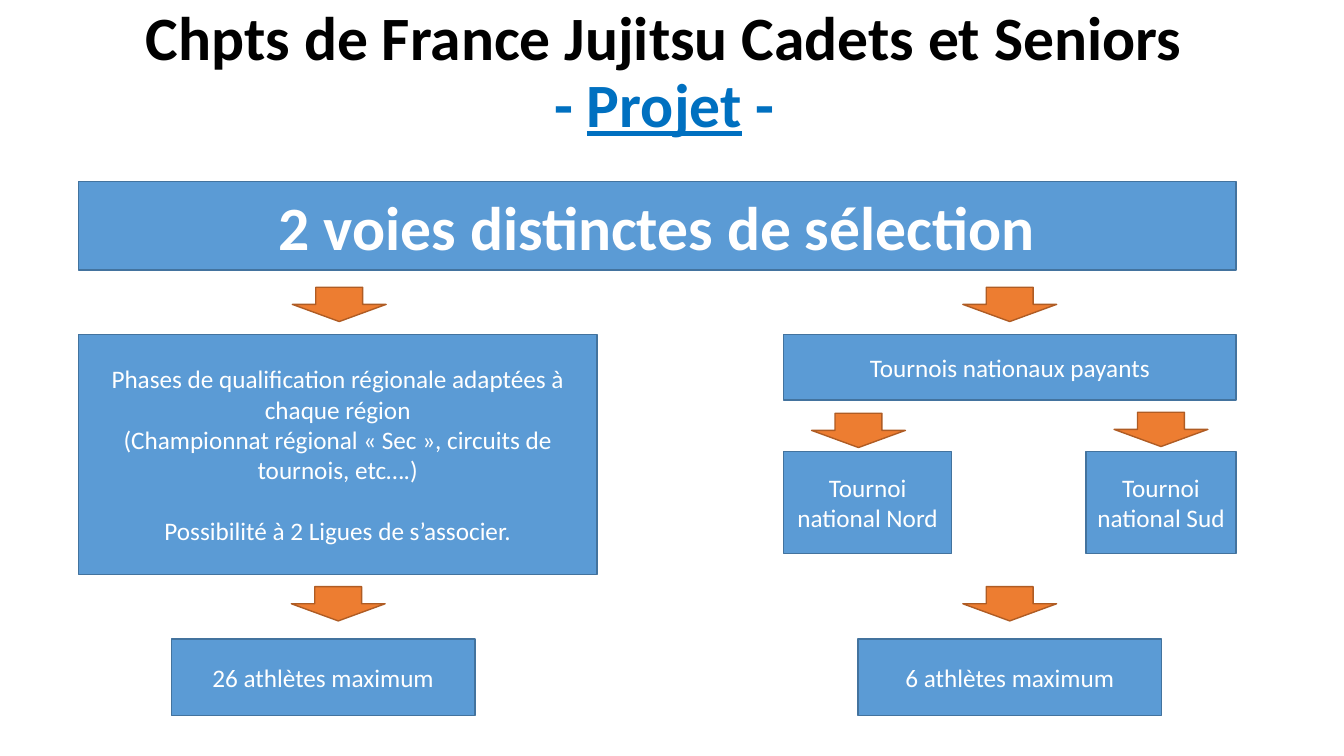
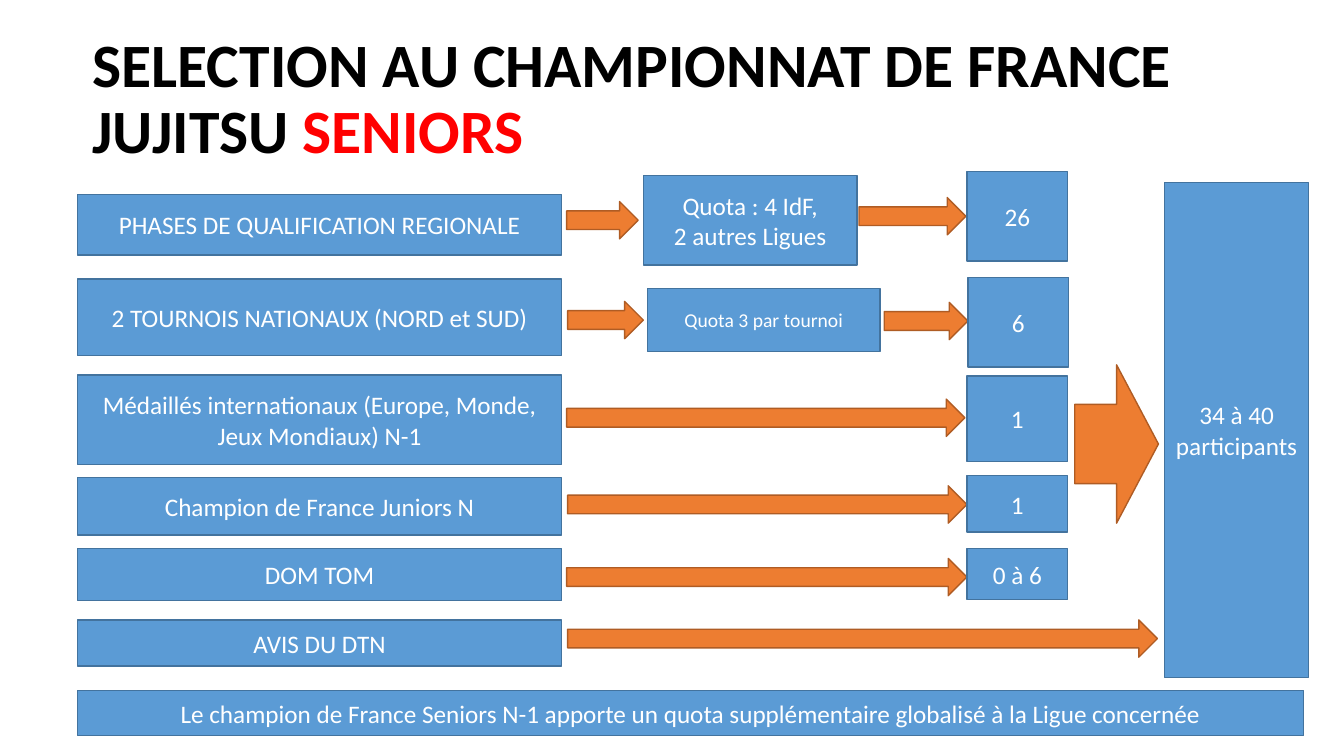
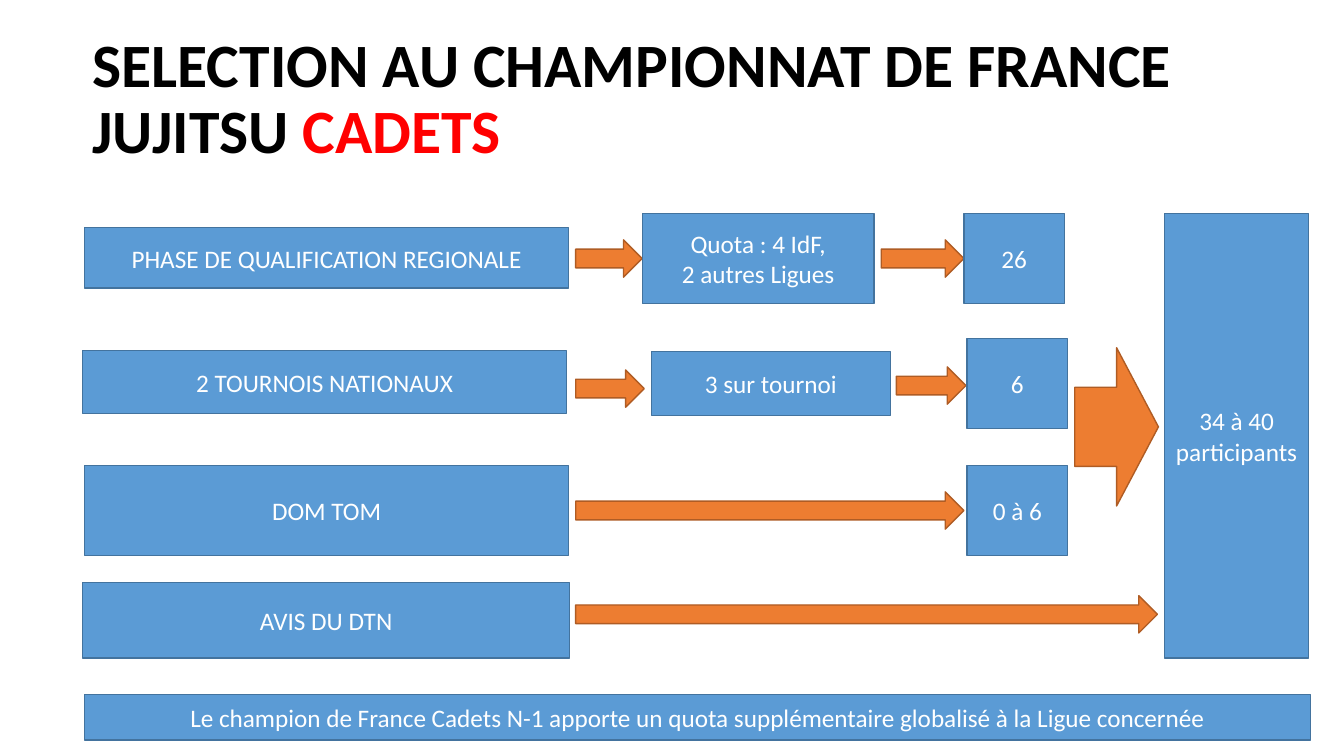
from pptx import Presentation
from pptx.dml.color import RGBColor
from pptx.enum.shapes import MSO_SHAPE
from pptx.enum.text import MSO_ANCHOR, PP_ALIGN
from pptx.util import Pt

PX = 9144  # 100 px to the inch
FONT = "Calibri"
BLACK = RGBColor(0x00, 0x00, 0x00)
WHITE = RGBColor(0xFF, 0xFF, 0xFF)
RED = RGBColor(0xFF, 0x00, 0x00)
NAVY = RGBColor(0x00, 0x70, 0xC0)
BLUE = RGBColor(0x5B, 0x9B, 0xD5)
BLUE_EDGE = RGBColor(0x43, 0x73, 0x9E)
ORANGE = RGBColor(0xED, 0x7D, 0x31)
ORANGE_EDGE = RGBColor(0xAF, 0x5C, 0x24)
RECT = MSO_SHAPE.RECTANGLE
DOWN = MSO_SHAPE.DOWN_ARROW
RIGHT = MSO_SHAPE.RIGHT_ARROW
MIDDLE = MSO_ANCHOR.MIDDLE
CENTER = PP_ALIGN.CENTER
LEFT = PP_ALIGN.LEFT
DOWN_W, DOWN_H = 93, 34
RIGHT_H = 37
COUNT_W = 100


def emu(box):
    return [n * PX for n in box]


def style(para, size, color, bold=False, align=CENTER):
    para.alignment = align
    font = para.font
    font.name, font.size, font.bold = FONT, Pt(size), bold
    font.color.rgb = color


def shape(slide, kind, box, fill, edge):
    item = slide.shapes.add_shape(kind, *emu(box))
    item.shadow.inherit = False
    item.fill.solid()
    item.fill.fore_color.rgb = fill
    item.line.color.rgb = edge
    item.line.width = Pt(1)
    return item


def arrow(slide, kind, box):
    shape(slide, kind, box, ORANGE, ORANGE_EDGE)


def panel(slide, box, text, size=18, bold=False):
    """Draw a blue box with one paragraph per line of text."""
    frame = shape(slide, RECT, box, BLUE, BLUE_EDGE).text_frame
    frame.word_wrap = True
    frame.vertical_anchor = MIDDLE
    frame.text = text
    for para in frame.paragraphs:
        style(para, size, WHITE, bold)
    return frame


def title(slide, box, lines, align=LEFT):
    """Write lines of (text, colour, underline) runs as one heading."""
    frame = slide.shapes.add_textbox(*emu(box)).text_frame
    frame.word_wrap = True
    frame.vertical_anchor = MIDDLE
    para = frame.paragraphs[0]
    style(para, 44, BLACK, True, align)
    para.line_spacing = 0.9
    for i, line in enumerate(lines):
        if i:
            para.add_line_break()
        for text, color, under in line:
            run = para.add_run()
            run.text = text
            font = run.font
            font.name, font.size, font.bold = FONT, Pt(44), True
            font.color.rgb = color
            font.underline = under


def step(slide, box, text, lift, shift=0):
    """Draw a box with a down arrow above it, lift px higher."""
    left, top, width, _ = box
    start = left + (width - DOWN_W) // 2 + shift
    arrow(slide, DOWN, (start, top - lift, DOWN_W, DOWN_H))
    return panel(slide, box, text)


def row(slide, box, text, arrows, quota=None, count=None):
    """Draw a label, then its arrows, quota and count relative to it."""
    left, top = box[:2]
    panel(slide, box, text)
    for dx, dy, width in arrows:
        arrow(slide, RIGHT, (left + dx, top + dy, width, RIGHT_H))
    if quota:
        words, dx, dy, width, height, size = quota
        panel(slide, (left + dx, top + dy, width, height), words, size)
    if count:
        words, dx, dy, height = count
        panel(slide, (left + dx, top + dy, COUNT_W, height), words)


def goal(slide, box, drop):
    """Draw the total and the big arrow that leads to it."""
    left, top = box[:2]
    panel(slide, box, "34 à 40 participants")
    arrow(slide, RIGHT, (left - 89, top + drop, 83, 157))


def routes(slide):
    title(slide, (84, 1, 1150, 145), [
        [("Chpts de France Jujitsu Cadets et Seniors", BLACK, False)],
        [("- ", NAVY, False), ("Projet", NAVY, True), (" -", NAVY, False)],
    ], CENTER)
    panel(slide, (78, 180, 1148, 88), "2 voies distinctes de sélection", 44, True)
    phases = step(slide, (78, 332, 514, 238),
                  "Phases de qualification régionale adaptées à chaque région\n"
                  "(Championnat régional « Sec », circuits de tournois, etc….)\n"
                  "Possibilité à 2 Ligues de s’associer.", 47, 2)
    phases.paragraphs[-1].space_before = Pt(22)
    step(slide, (777, 332, 449, 65), "Tournois nationaux payants", 47)
    step(slide, (777, 448, 167, 101), "Tournoi national Nord", 38, -9)
    step(slide, (1077, 448, 149, 101), "Tournoi national Sud", 39)
    step(slide, (170, 634, 301, 76), "26 athlètes maximum", 52, 15)
    step(slide, (851, 634, 301, 76), "6 athlètes maximum", 52)


def picks(slide, group, width, rows, total, drop, foot):
    """Fill a selection slide for one age group."""
    title(slide, (82, 27, width, 145), [[
        ("SELECTION AU CHAMPIONNAT DE FRANCE JUJITSU ", BLACK, False),
        (group.upper(), RED, False),
    ]])
    for parts in rows:
        row(slide, *parts)
    goal(slide, total, drop)
    panel(slide, foot, f"Le champion de France {group} N-1 apporte un quota "
          "supplémentaire globalisé à la Ligue concernée")


LEAGUES = "Quota : 4 IdF,\n2 autres Ligues"
SENIORS = [
    ((77, 193, 480, 60), "PHASES DE QUALIFICATION REGIONALE",
     [(485, 7, 71), (775, 3, 106)],
     (LEAGUES, 561, -19, 212, 89, 18), ("26", 882, -23, 89)),
    ((77, 277, 480, 76), "2 TOURNOIS NATIONAUX (NORD et SUD)",
     [(486, 22, 75), (800, 23, 83)],
     ("Quota 3 par tournoi", 565, 9, 231, 63, 14), ("6", 883, -2, 89)),
    ((77, 372, 480, 89),
     "Médaillés internationaux (Europe, Monde, Jeux Mondiaux) N-1",
     [(485, 24, 395)], None, ("1", 882, 1, 85)),
    ((77, 474, 480, 57), "Champion de France Juniors N",
     [(486, 8, 396)], None, ("1", 882, -2, 56)),
    ((77, 544, 480, 52), "DOM TOM",
     [(485, 10, 397)], None, ("0 à 6", 882, 0, 51)),
    ((77, 615, 480, 46), "AVIS DU DTN", [(486, 0, 585)]),
]
CADETS = [
    ((84, 226, 480, 60), "PHASE DE QUALIFICATION REGIONALE",
     [(487, 12, 66), (790, 12, 82)],
     (LEAGUES, 553, -14, 230, 89, 18), ("26", 872, -14, 89)),
    ((82, 348, 480, 62), "2 TOURNOIS NATIONAUX",
     [(489, 19, 68), (807, 16, 69)],
     ("3 sur tournoi", 564, 1, 237, 63, 18), ("6", 877, -12, 89)),
    ((84, 462, 480, 89), "DOM TOM",
     [(487, 26, 385)], None, ("0 à 6", 875, 0, 89)),
    ((82, 578, 483, 75), "AVIS DU DTN", [(489, 13, 577)]),
]


def main():
    deck = Presentation()
    deck.slide_width, deck.slide_height = emu((1333, 750))
    blank = deck.slide_layouts[6]
    routes(deck.slides.add_slide(blank))
    picks(deck.slides.add_slide(blank), "Seniors", 1216, SENIORS,
          (1155, 181, 143, 491), 181, (77, 685, 1216, 45))
    picks(deck.slides.add_slide(blank), "Cadets", 1150, CADETS,
          (1155, 212, 143, 441), 133, (84, 689, 1216, 45))
    deck.save("out.pptx")


if __name__ == "__main__":
    main()
